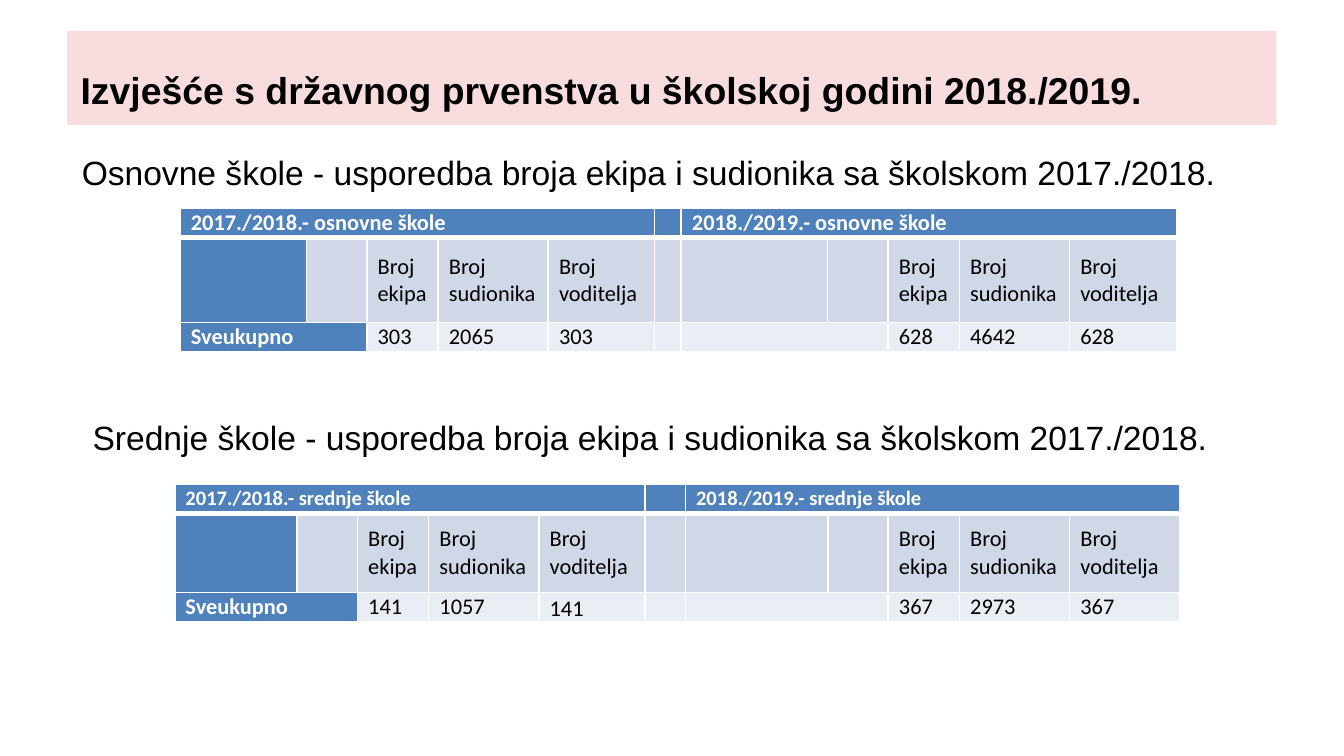
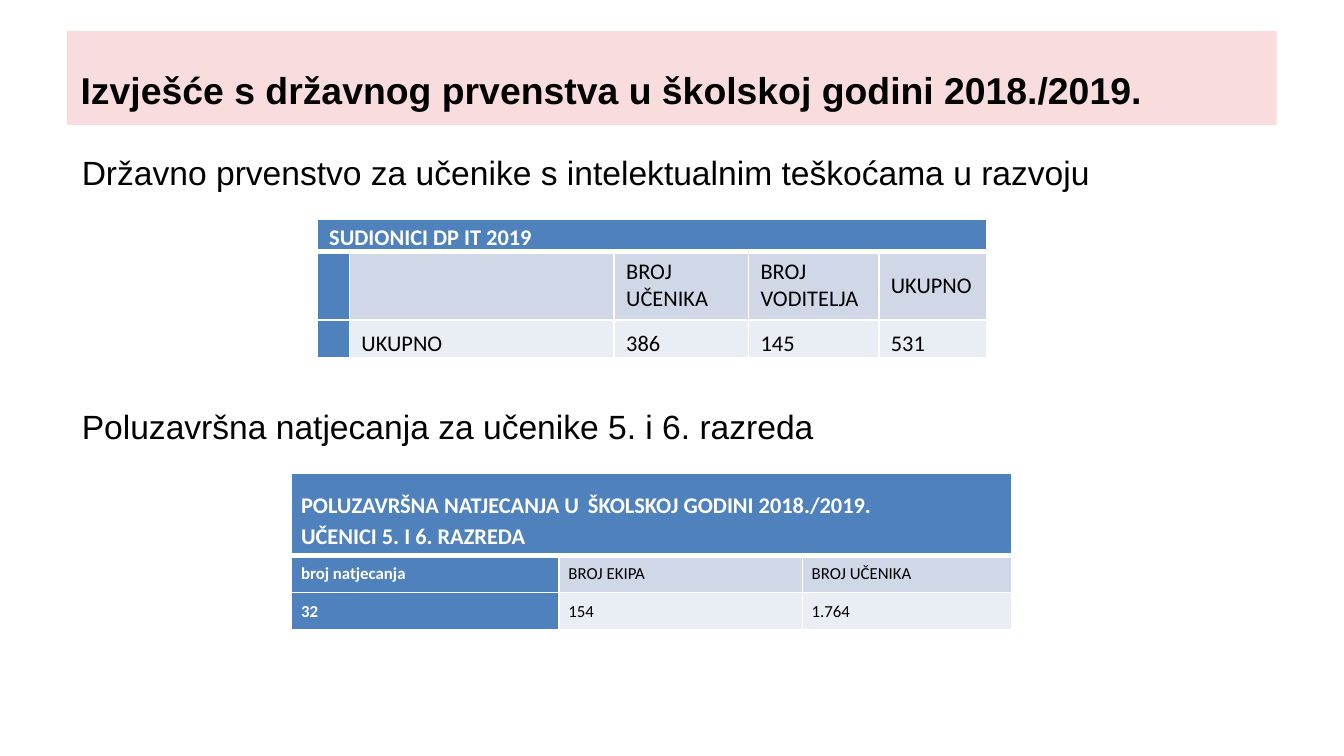
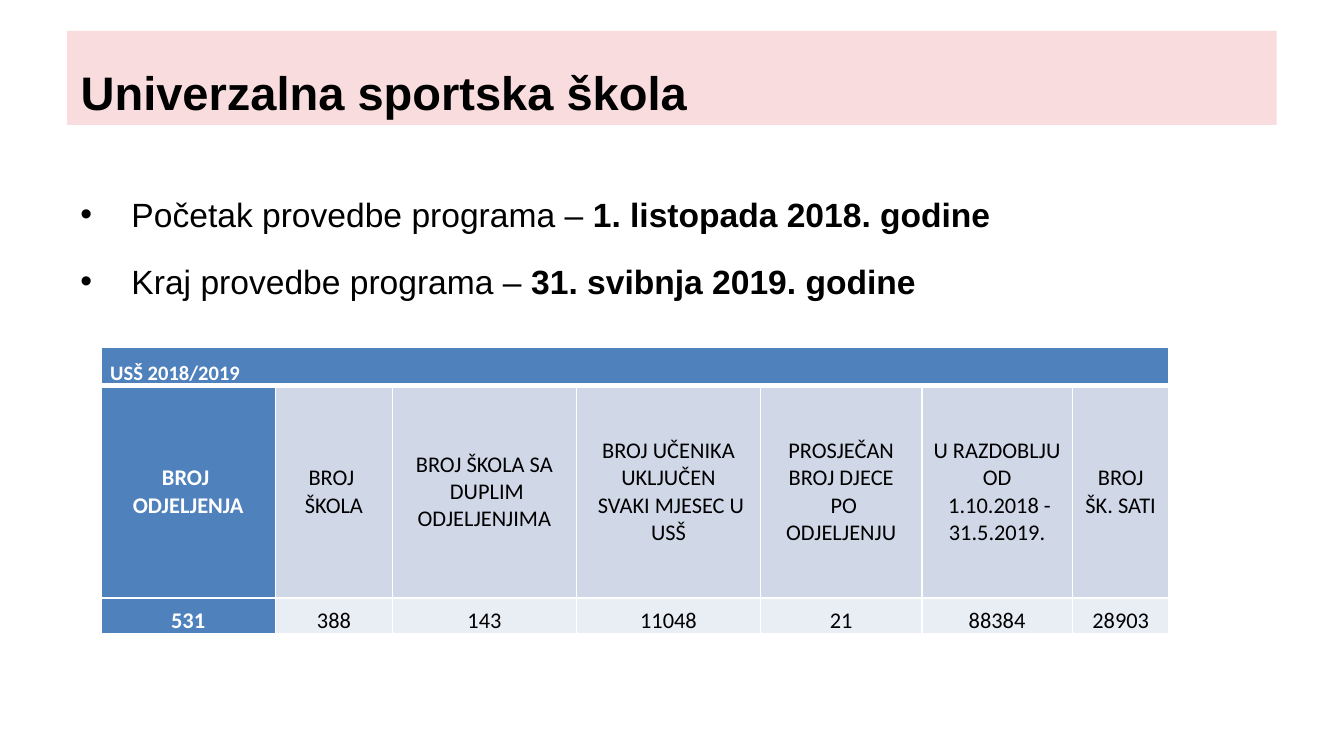
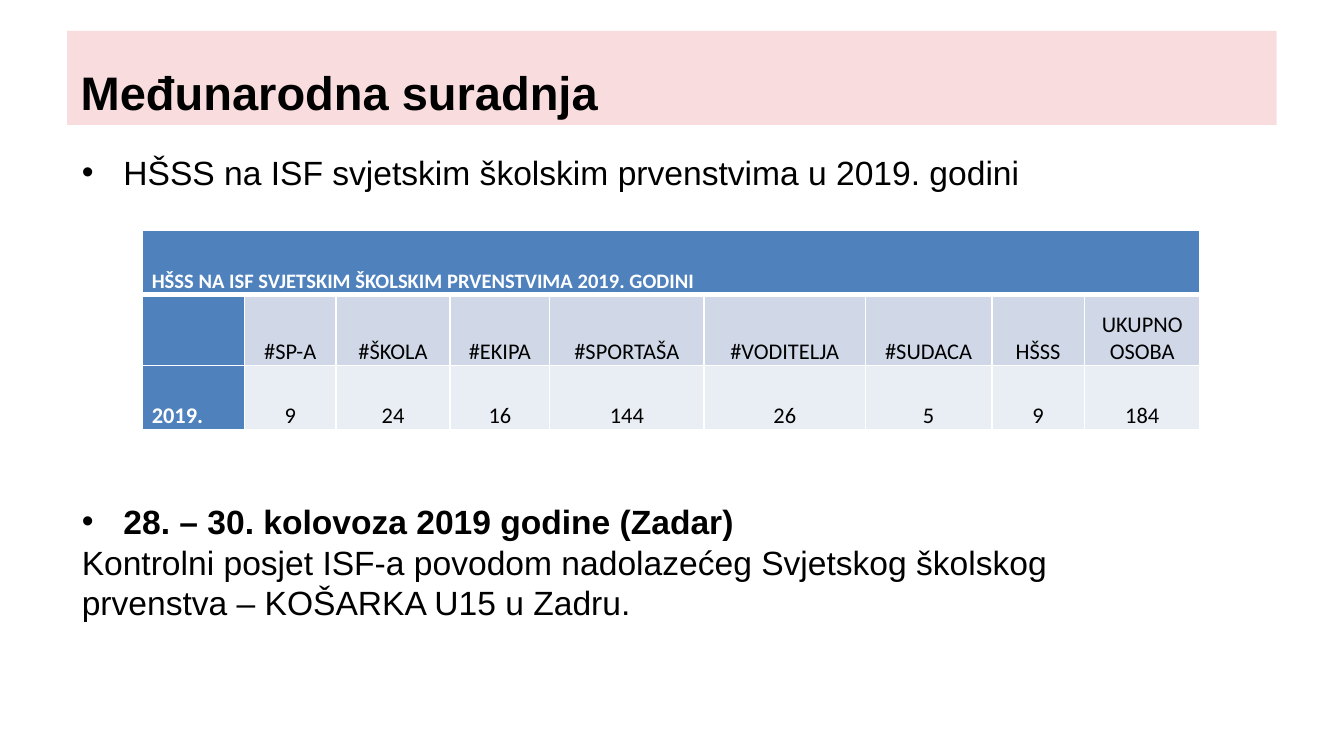
"""Builds four slides reporting on school sport competitions."""
import dataclasses

import lxml.etree
import pptx
import pptx.dml.color
import pptx.enum.text
import pptx.oxml.ns
import pptx.util

Inches = pptx.util.Inches
Align = pptx.enum.text.PP_ALIGN
Anchor = pptx.enum.text.MSO_ANCHOR
qn = pptx.oxml.ns.qn


@dataclasses.dataclass(frozen=True)
class Theme:
    """Colours, fonts and type sizes of the deck."""
    band: str = "DD1F26"
    band_opacity: int = 15
    text: str = "000000"
    white: str = "FFFFFF"
    blue: str = "4F81BD"
    row_fills: tuple = ("4F81BD", "D0D8E8", "E9EDF4")
    text_font: str = "Arial"
    table_font: str = "Calibri"
    long_title: float = 20
    short_title: float = 25.2
    body: float = 18
    table: float = 12
    table_small: float = 11
    table_tiny: float = 9
    empty_cell: float = 8


THEME = Theme()
REPORT_TITLE = "Izvješće s državnog prvenstva u školskoj godini 2018./2019."


def rgb(value):
    """Return a colour object for a hex value."""
    return pptx.dml.color.RGBColor.from_string(value)


def add_span(para, text, font, size, color, bold=False):
    """Add one formatted run to a paragraph."""
    span = para.add_run()
    span.text = text
    span.font.name = font
    span.font.size = pptx.util.Pt(size)
    span.font.bold = bold
    span.font.color.rgb = rgb(color)


def add_page(deck, title_text, size):
    """Add a title-only slide with the tinted title band."""
    page = deck.slides.add_slide(deck.slide_layouts[5])
    title = page.shapes.title
    title.left, title.top = Inches(0.5), Inches(0.23)
    title.width, title.height = Inches(9), Inches(0.7)
    title.fill.solid()
    title.fill.fore_color.rgb = rgb(THEME.band)
    tint = title._element.spPr.find(".//" + qn("a:srgbClr"))
    lxml.etree.SubElement(tint, qn("a:alpha"), val=str(THEME.band_opacity * 1000))
    frame = title.text_frame
    frame.auto_size = pptx.enum.text.MSO_AUTO_SIZE.NONE
    frame.vertical_anchor = Anchor.MIDDLE
    para = frame.paragraphs[0]
    para.alignment = Align.LEFT
    para.line_spacing = 1.5
    add_span(para, title_text, THEME.text_font, size, THEME.text, True)
    return page


def add_bullet(para, indent):
    """Give a paragraph a round bullet with a hanging indent in inches."""
    properties = para._p.get_or_add_pPr()
    properties.set("marL", str(Inches(indent)))
    properties.set("indent", str(-Inches(indent)))
    lxml.etree.SubElement(properties, qn("a:buFont"), typeface=THEME.text_font)
    lxml.etree.SubElement(properties, qn("a:buChar"), char="•")


def add_text(page, left, top, width, height, lines, spacing=None, gap=0):
    """Add a text box from lines of (bullet indent, [(text, bold), ...])."""
    box = page.shapes.add_textbox(Inches(left), Inches(top), Inches(width), Inches(height))
    frame = box.text_frame
    frame.word_wrap = True
    for index, (indent, spans) in enumerate(lines):
        para = frame.add_paragraph() if index else frame.paragraphs[0]
        if spacing:
            para.line_spacing = spacing
        if index and gap:
            para.space_before = pptx.util.Pt(gap)
        if indent:
            add_bullet(para, indent)
        for text, bold in spans:
            add_span(para, text, THEME.text_font, THEME.body, THEME.text, bold)


def add_heading(page, left, top, width, height, text):
    """Add a one-line plain heading above a table."""
    add_text(page, left, top, width, height, [(0, [(text, False)])])


def set_borders(cell, row):
    """Draw white cell borders, thicker between header and body."""
    properties = cell._tc.get_or_add_tcPr()
    heavy = {(0, "B"), (1, "T")}
    for side in "LRTB":
        points = 3 if (row, side) in heavy else 1
        line = lxml.etree.SubElement(properties, qn("a:ln" + side), w=str(pptx.util.Pt(points)))
        fill = lxml.etree.SubElement(line, qn("a:solidFill"))
        lxml.etree.SubElement(fill, qn("a:srgbClr"), val=THEME.white)


def fill_cell(cell, content, size, color, bold, align):
    """Write a string, or a list of paragraphs made of (text, size) runs."""
    if not content:
        lxml.etree.SubElement(cell.text_frame.paragraphs[0]._p, qn("a:endParaRPr"),
                              sz=str(int(THEME.empty_cell * 100)))
        return
    paragraphs = [[(content, size)]] if isinstance(content, str) else content
    for index, runs in enumerate(paragraphs):
        para = cell.text_frame.add_paragraph() if index else cell.text_frame.paragraphs[0]
        para.alignment = align
        for text, run_size in runs:
            for part, line in enumerate(text.split("\n")):
                if part:
                    para.add_line_break()
                add_span(para, line, THEME.table_font, run_size, color, bold)


def add_grid(page, left, top, widths, heights, rows, anchors, inset=0.07,
             header_size=THEME.table, size=THEME.table, align=Align.JUSTIFY,
             first_align=Align.JUSTIFY):
    """Add a table; None in a row joins that cell to the one on its left."""
    frame = page.shapes.add_table(len(rows), len(widths), Inches(left), Inches(top),
                                  Inches(sum(widths)), Inches(sum(heights)))
    table = frame.table
    for column, width in zip(table.columns, widths):
        column.width = Inches(width)
    for row, (height, contents) in enumerate(zip(heights, rows)):
        table.rows[row].height = Inches(height)
        for column, content in enumerate(contents):
            cell = table.cell(row, column)
            lead = row == 0 or column == 0
            set_borders(cell, row)
            cell.fill.solid()
            cell.fill.fore_color.rgb = rgb(THEME.blue if lead else THEME.row_fills[row])
            cell.margin_left = cell.margin_right = Inches(inset)
            cell.margin_top = cell.margin_bottom = 0
            cell.vertical_anchor = anchors[row]
            cell_align = Align.JUSTIFY if row == 0 else first_align if column == 0 else align
            fill_cell(cell, content, size if row else header_size,
                      THEME.white if lead else THEME.text, lead, cell_align)
        join_cells(table, row, contents)
    return table


def join_cells(table, row, contents):
    """Merge each cell with the None entries that follow it."""
    starts = [column for column, content in enumerate(contents) if content is not None]
    for start, following in zip(starts, starts[1:] + [len(contents)]):
        if following - start > 1:
            table.cell(row, start).merge(table.cell(row, following - 1))


def add_year_comparison(page, left, top, widths, heights, schools, earlier, later, header_size):
    """Add a table comparing two school years for one school level."""
    counts = ["Broj ekipa", "Broj sudionika", "Broj voditelja"]
    joined = [None] * 4
    rows = [
        [f"2017./2018.- {schools}", *joined, "", f"2018./2019.- {schools}", *joined],
        ["", "", *counts, "", "", "", *counts],
        ["Sveukupno", None, *earlier, "", "", None, *later],
    ]
    return add_grid(page, left, top, widths, heights, rows, [Anchor.MIDDLE] * 3,
                    inset=0.08, header_size=header_size)


def build_comparison(deck):
    """Build the comparison of primary and secondary schools."""
    page = add_page(deck, REPORT_TITLE, THEME.long_title)
    add_heading(page, 0.51, 1.08, 8.99, 0.47,
                "Osnovne škole - usporedba broja ekipa i sudionika sa školskom 2017./2018.")
    counts = [0.45, 0.53, 0.82]
    add_year_comparison(page, 1.34, 1.55, [0.94, *counts, 0.79, 0.19, 1.09, *counts, 0.8],
                        [0.22, 0.63, 0.22], "osnovne škole",
                        ["303", "2065", "303"], ["628", "4642", "628"], THEME.table)
    secondary = add_year_comparison(
        page, 1.3, 3.6, [0.91, *counts, 0.79, 0.3, 1.06, *counts, 0.82],
        [0.22, 0.59, 0.22], "srednje škole",
        ["141", "1057", "141"], ["367", "2973", "367"], THEME.table_small)
    secondary.cell(2, 4).vertical_anchor = Anchor.BOTTOM
    add_heading(page, 0.59, 3.05, 8.82, 0.71,
                "Srednje škole - usporedba broja ekipa i sudionika sa školskom 2017./2018.")


def build_championships(deck):
    """Build the national championship and semifinal tables."""
    page = add_page(deck, REPORT_TITLE, THEME.long_title)
    add_heading(page, 0.51, 1.08, 8.99, 0.47,
                "Državno prvenstvo za učenike s intelektualnim teškoćama u razvoju")
    add_grid(page, 2.36, 1.63, [0.24, 1.97, 1, 0.97, 0.8], [0.24, 0.51, 0.28], [
        ["SUDIONICI DP IT 2019"] + [None] * 4,
        ["", "", "BROJ UČENIKA", "BROJ VODITELJA", "UKUPNO"],
        ["", "UKUPNO", "386", "145", "531"],
    ], [Anchor.BOTTOM, Anchor.MIDDLE, Anchor.BOTTOM], inset=0.09)
    semifinal_title = [
        [("POLUZAVRŠNA NATJECANJA U", THEME.table), (" ", THEME.long_title),
         ("ŠKOLSKOJ GODINI 2018./2019.", THEME.table)],
        [("UČENICI 5. I 6. RAZREDA", THEME.table)],
    ]
    add_grid(page, 2.17, 3.52, [1.99, 1.81, 1.56], [0.61, 0.28, 0.28], [
        [semifinal_title, None, None],
        ["broj natjecanja", "BROJ EKIPA", "BROJ UČENIKA"],
        ["32", "154", "1.764"],
    ], [Anchor.MIDDLE] * 3, size=THEME.table_tiny)
    add_heading(page, 0.51, 2.97, 8.58, 0.4, "Poluzavršna natjecanja za učenike 5. i 6. razreda")


def build_sports_school(deck):
    """Build the universal sports school slide."""
    page = add_page(deck, "Univerzalna sportska škola", THEME.short_title)
    add_text(page, 0.5, 1.24, 8.99, 1.18, [
        (0.38, [("Početak provedbe programa – ", False), ("1. listopada 2018. godine", True)]),
        (0.38, [("Kraj provedbe programa –", False), (" 31. svibnja 2019. godine", True)]),
    ], spacing=1.5, gap=3.6)
    add_grid(page, 0.75, 2.58, [1.3, 0.87, 1.37, 1.37, 1.2, 1.12, 0.72], [0.29, 1.58, 0.27], [
        ["USŠ 2018/2019"] + [None] * 6,
        ["BROJ \nODJELJENJA", "BROJ \nŠKOLA", "BROJ ŠKOLA SA\n DUPLIM ODJELJENJIMA",
         "BROJ UČENIKA UKLJUČEN\n SVAKI MJESEC U USŠ",
         "PROSJEČAN BROJ DJECE\n PO ODJELJENJU",
         "U RAZDOBLJU OD\n 1.10.2018 - 31.5.2019.", "BROJ ŠK. SATI"],
        ["531", "388", "143", "11048", "21", "88384", "28903"],
    ], [Anchor.BOTTOM, Anchor.MIDDLE, Anchor.BOTTOM], header_size=THEME.table_small,
        align=Align.CENTER, first_align=Align.CENTER)


def build_international(deck):
    """Build the international cooperation slide."""
    page = add_page(deck, "Međunarodna suradnja", THEME.short_title)
    add_grid(page, 1.06, 1.71, [0.76, 0.68, 0.85, 0.74, 1.15, 1.2, 0.94, 0.69, 0.86],
             [0.48, 0.53, 0.48], [
        ["HŠSS NA ISF SVJETSKIM ŠKOLSKIM PRVENSTVIMA 2019. GODINI"] + [None] * 8,
        ["", "#SP-A", "#ŠKOLA", "#EKIPA", "#SPORTAŠA", "#VODITELJA", "#SUDACA", "HŠSS",
         "UKUPNO OSOBA"],
        ["2019.", "9", "24", "16", "144", "26", "5", "9", "184"],
    ], [Anchor.BOTTOM] * 3, header_size=THEME.table_small, align=Align.CENTER)
    add_text(page, 0.51, 1.08, 8.98, 0.4, [
        (0.31, [("HŠSS na ISF svjetskim školskim prvenstvima u 2019. godini", False)]),
    ])
    add_text(page, 0.51, 3.68, 8.35, 1.01, [
        (0.31, [("28. – 30. kolovoza 2019 godine (Zadar)", True)]),
        (0, [("Kontrolni posjet ISF-a povodom nadolazećeg Svjetskog školskog prvenstva"
              " – KOŠARKA U15 u Zadru.", False)]),
    ])


def main():
    """Build and save a widescreen deck."""
    deck = pptx.Presentation()
    deck.slide_width = Inches(10)
    deck.slide_height = Inches(10 * 9 / 16)
    build_comparison(deck)
    build_championships(deck)
    build_sports_school(deck)
    build_international(deck)
    deck.save("out.pptx")


if __name__ == "__main__":
    main()
